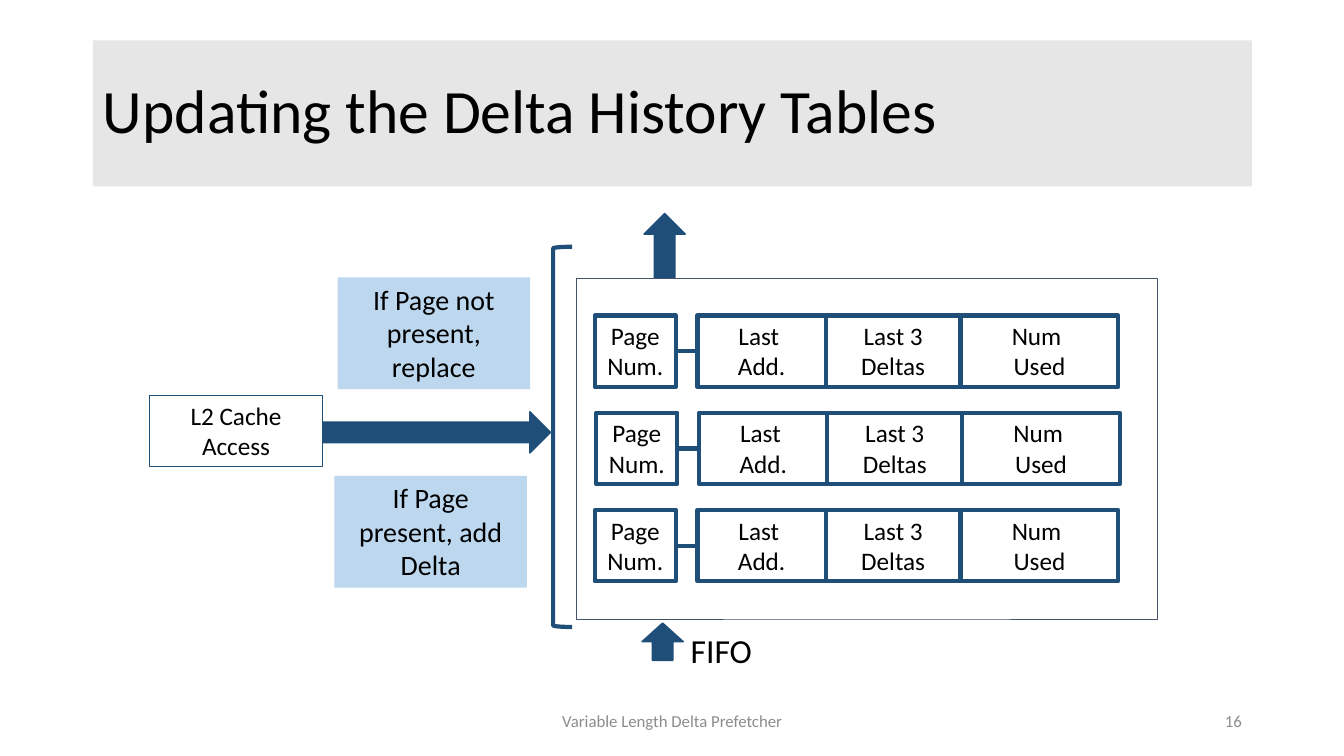
from lxml import etree
from pptx import Presentation
from pptx import util as u
from pptx.dml.color import RGBColor
from pptx.enum import shapes, text
from pptx.oxml.ns import qn
from pptx.util import Cm

NAVY = RGBColor(0x1F, 0x4E, 0x79)
SLATE = RGBColor(0x44, 0x54, 0x6A)
PALE_BLUE = RGBColor(0xBD, 0xD7, 0xEE)
LIGHT_GREY = RGBColor(0xE7, 0xE6, 0xE6)
MID_GREY = RGBColor(0x8C, 0x8C, 0x8C)
WHITE = RGBColor(0xFF, 0xFF, 0xFF)
BLACK = RGBColor(0, 0, 0)

KIND = shapes.MSO_SHAPE
LEFT, CENTER, RIGHT = text.PP_ALIGN.LEFT, text.PP_ALIGN.CENTER, text.PP_ALIGN.RIGHT
TOP, MIDDLE = text.MSO_ANCHOR.TOP, text.MSO_ANCHOR.MIDDLE

# Table rows: the page number stands apart, the other fields adjoin
ROW_LEFTS = (14.99, 15.03, 14.99)
ROW_TOP, ROW_PITCH, ROW_HEIGHT = 7.95, 2.45, 1.8
PAGE_WIDTH, PAGE_GAP = 2.04, 0.55
FIELDS = (("Last \nAdd.", 3.23), ("Last 3 Deltas", 3.4), ("Num \nUsed", 3.97))


def write(shape, words, size, color=BLACK, align=CENTER, anchor=TOP, wrap=True, spacing=1.0):
    frame = shape.text_frame
    frame.text = words
    frame_format = {"word_wrap": wrap, "vertical_anchor": anchor,
                    "auto_size": text.MSO_AUTO_SIZE.NONE}
    for name, value in frame_format.items():
        setattr(frame, name, value)
    for paragraph in frame.paragraphs:
        paragraph.alignment = align
        paragraph.line_spacing = spacing
        font_format = {"name": "Calibri", "size": u.Pt(size)}
        for name, value in font_format.items():
            setattr(paragraph.font, name, value)
        paragraph.font.color.rgb = color


def add_figure(parent, kind, box, fill=None, line=None, width=1):
    shape = parent.shapes.add_shape(kind, *map(Cm, box))
    shape.shadow.inherit = False
    if fill is None:
        shape.fill.background()
    else:
        shape.fill.solid()
        shape.fill.fore_color.rgb = fill
    if line is None:
        shape.line.fill.background()
    else:
        shape.line.color.rgb = line
        shape.line.width = u.Pt(width)
    return shape


def add_box(parent, box, words, size, **style):
    shape = add_figure(parent, KIND.RECTANGLE, box, **style)
    write(shape, words, size)
    return shape


def add_label(slide, box, words, size, **style):
    write(slide.shapes.add_textbox(*map(Cm, box)), words, size, **style)


def add_arrow(slide, box, rotation=0):
    arrow = add_figure(slide, KIND.UP_ARROW, box, fill=NAVY, line=NAVY)
    arrow.rotation = rotation


def add_link(group, start, end):
    link = group.shapes.add_connector(shapes.MSO_CONNECTOR.STRAIGHT, 0, 0, 0, 0)
    link.begin_connect(start, 3)
    link.end_connect(end, 1)
    link.line.color.rgb = NAVY
    link.line.width = u.Pt(3)
    etree.SubElement(link._element.spPr, qn("a:effectLst"))


def add_history_row(slide, left, top):
    group = slide.shapes.add_group_shape()
    outline = {"line": NAVY, "width": 3}
    page = add_box(group, (left, top, PAGE_WIDTH, ROW_HEIGHT), "Page Num.", 18, **outline)
    left += PAGE_WIDTH + PAGE_GAP
    fields = []
    for words, width in FIELDS:
        fields.append(add_box(group, (left, top, width, ROW_HEIGHT), words, 18, **outline))
        left += width
    add_link(group, page, fields[0])


def add_title(slide, words):
    title = slide.shapes.title
    place = {"left": 2.34, "top": 1.02, "width": 29.21, "height": 3.68}
    for name, value in place.items():
        setattr(title, name, Cm(value))
    title.fill.solid()
    title.fill.fore_color.rgb = LIGHT_GREY
    write(title, words, 44, align=LEFT, anchor=MIDDLE, spacing=0.9)


def main():
    presentation = Presentation()
    presentation.slide_width, presentation.slide_height = Cm(33.87), Cm(19.05)
    slide = presentation.slides.add_slide(presentation.slide_layouts[5])
    add_title(slide, "Updating the Delta History Tables")

    # Table frame with the FIFO arrows
    add_arrow(slide, (16.23, 5.38, 1.04, 1.9))
    add_figure(slide, KIND.RECTANGLE, (14.53, 7.01, 14.63, 8.59), WHITE, SLATE, 0.5)
    add_arrow(slide, (16.18, 15.7, 1.04, 0.94))
    add_label(slide, (17.15, 15.75, 2.06, 1.27), "FIFO", 24, wrap=False)

    # Cache access and its two outcomes
    add_arrow(slide, (10.36, 7.9, 1.04, 5.99), rotation=90)
    add_box(slide, (3.78, 9.96, 4.34, 1.8), "L2 Cache Access", 18,
            fill=WHITE, line=NAVY, width=0.75)
    add_figure(slide, KIND.LEFT_BRACKET, (13.94, 6.22, 0.48, 9.58), line=NAVY, width=3)
    add_box(slide, (8.43, 11.99, 4.85, 2.82), "If Page present, add Delta", 20, fill=PALE_BLUE)
    add_box(slide, (8.51, 6.99, 4.85, 2.82), "If Page not present, replace", 20, fill=PALE_BLUE)

    # History rows
    for index, left in enumerate(ROW_LEFTS):
        add_history_row(slide, left, ROW_TOP + index * ROW_PITCH)

    # Footer
    footer = {"color": MID_GREY, "anchor": MIDDLE}
    add_label(slide, (11.23, 17.65, 11.43, 1.02), "Variable Length Delta Prefetcher", 12, **footer)
    add_label(slide, (23.93, 17.65, 7.62, 1.02), "16", 12, align=RIGHT, **footer)

    presentation.save("out.pptx")


if __name__ == "__main__":
    main()
